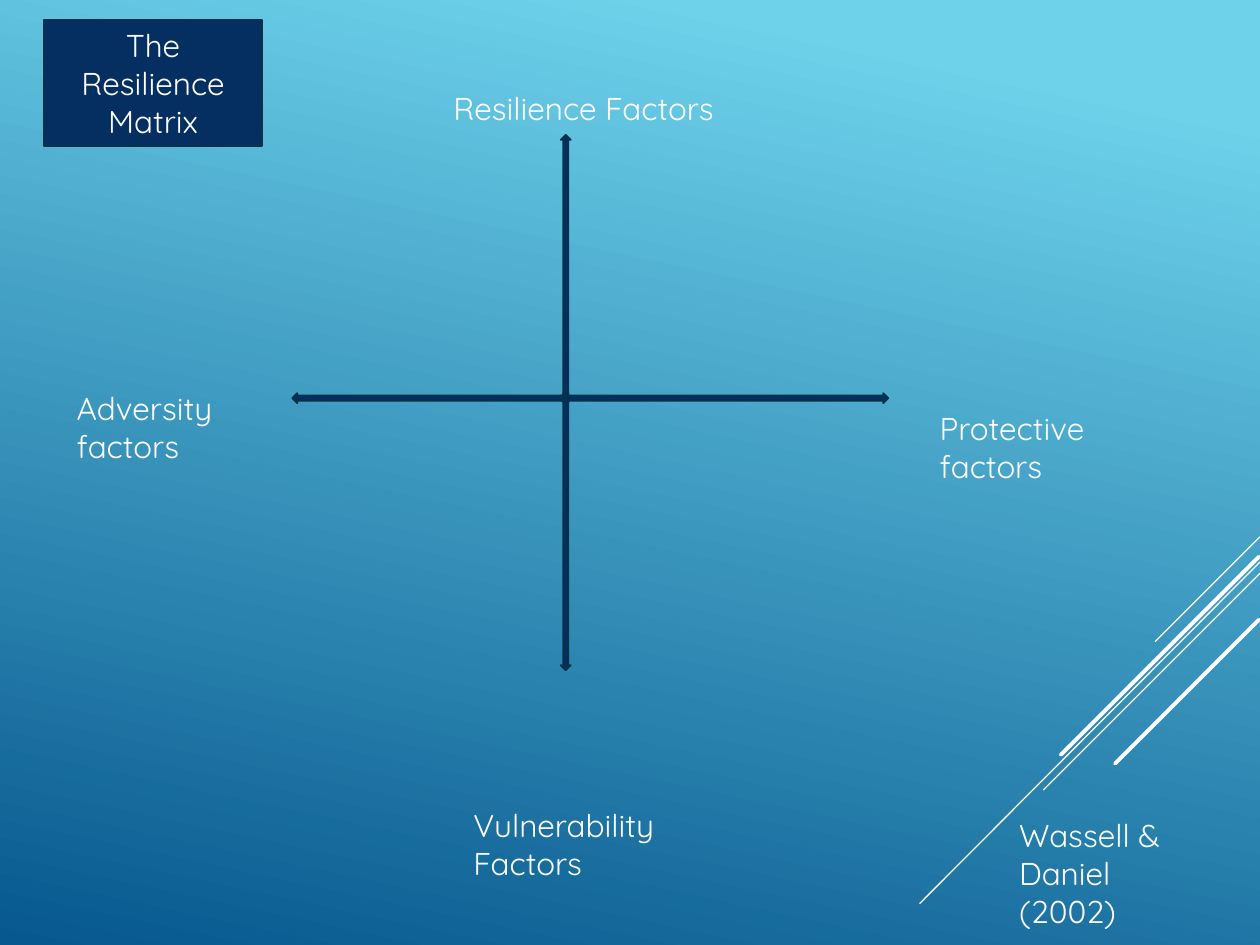
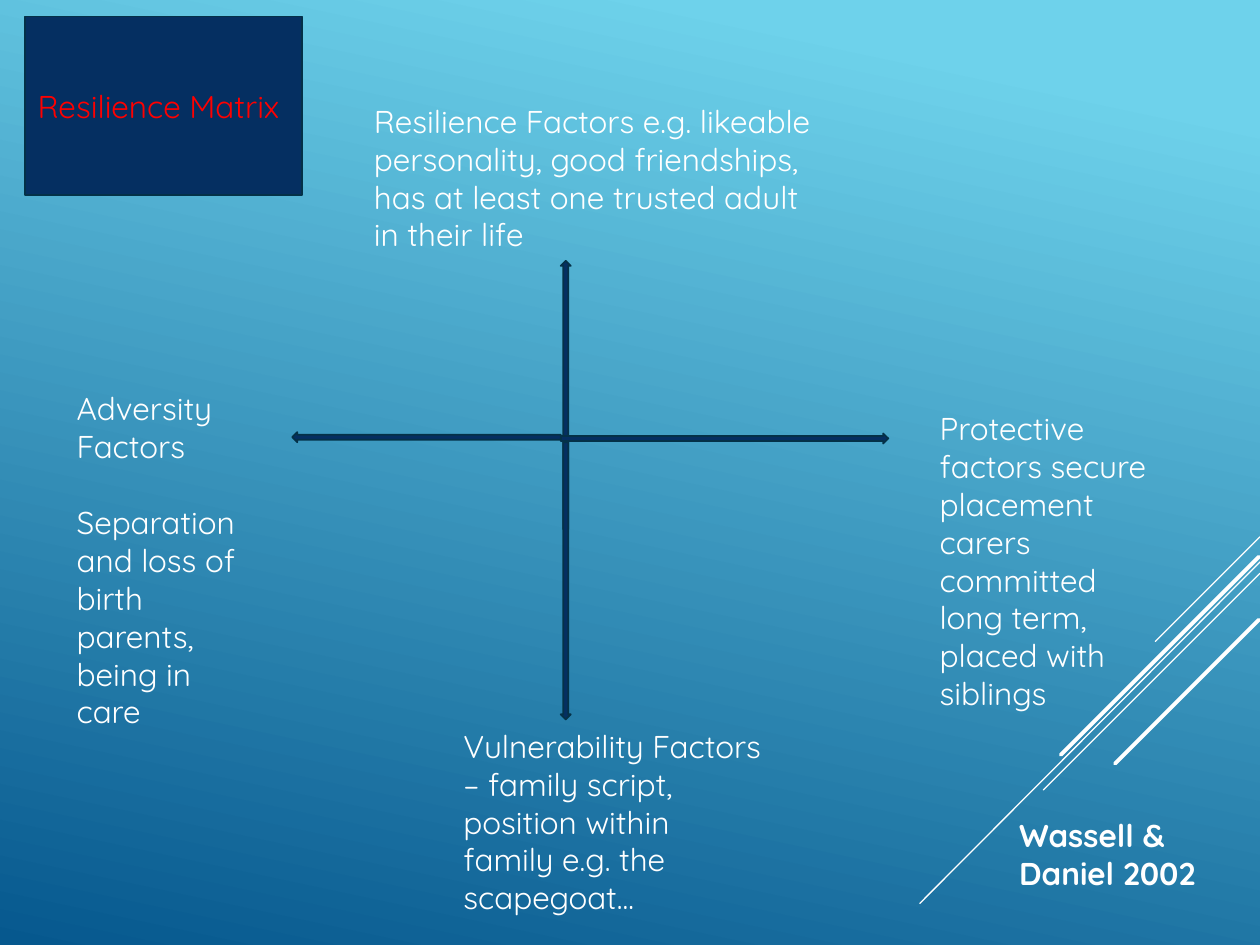
"""Build two slides showing the resilience matrix, plain and with examples."""
from lxml.etree import SubElement
from pptx import Presentation
from pptx.dml.color import RGBColor
from pptx.enum.shapes import MSO_CONNECTOR, MSO_SHAPE
from pptx.enum.text import MSO_ANCHOR, PP_ALIGN
from pptx.oxml.ns import qn
from pptx.util import Inches, Pt

SKY = RGBColor(0x6E, 0xD2, 0xEB)
DEEP = RGBColor(0x06, 0x58, 0x8E)
NAVY = RGBColor(0x05, 0x2F, 0x61)
EDGE = RGBColor(0x04, 0x31, 0x48)
WHITE = RGBColor(0xFF, 0xFF, 0xFF)
RED = RGBColor(0xFF, 0x00, 0x00)

BODY = {"name": "Quicksand", "size": Pt(18), "bold": False}
STRIPES = [
    (10, 4.26, 9.17, 5.09, 0.75),
    (10, 4.46, 7.3, 7.17, 0.75),
    (10, 4.55, 8.28, 6.27, 0.75),
    (9.99, 4.42, 8.42, 5.99, 2.25),
    (9.99, 4.92, 8.85, 6.06, 2.25),
]
ARROWS = [MSO_SHAPE.UP_ARROW, MSO_SHAPE.RIGHT_ARROW, MSO_SHAPE.LEFT_ARROW, MSO_SHAPE.DOWN_ARROW]

SLIDES = [
    {
        "arrows": [(4.45, 1.07, 0.08, 2.13), (4.45, 3.12, 2.6, 0.08),
                   (2.32, 3.12, 2.2, 0.08), (4.45, 3.12, 0.08, 2.2)],
        "labels": [
            ((0.51, 3.04, 1.42, 0.71), ["Adversity", "factors"]),
            ((7.36, 3.2, 1.89, 0.71), ["Protective factors"]),
            ((3.5, 0.66, 3.23, 0.4), ["Resilience Factors"]),
            ((3.66, 6.35, 1.97, 0.71), ["Vulnerability Factors"]),
        ],
        "title": ((0.35, 0.16, 1.73, 1), "The Resilience Matrix", WHITE, PP_ALIGN.CENTER),
        "credit": ((7.99, 6.43, 1.65, 1.01), "Wassell & Daniel (2002)", False),
    },
    {
        "arrows": [(4.45, 2.07, 0.08, 2.13), (4.45, 3.44, 2.6, 0.08),
                   (2.32, 3.43, 2.13, 0.08), (4.45, 3.51, 0.08, 2.2)],
        "labels": [
            ((0.51, 3.04, 1.57, 2.83),
             ["Adversity", "Factors", "Separation and loss of birth parents, being in care"]),
            ((7.36, 3.2, 1.89, 2.52),
             ["Protective factors secure placement carers committed long term, placed with siblings"]),
            ((2.87, 0.76, 3.7, 1.31),
             ["Resilience Factors e.g. likeable personality, good friendships, "
              "has at least one trusted adult in their life"]),
            ((3.58, 5.72, 2.6, 1.62),
             ["Vulnerability Factors – family script, position within family e.g. the scapegoat..."]),
        ],
        "title": ((0.2, 0.13, 2.2, 1.42), "Resilience Matrix", RED, PP_ALIGN.LEFT),
        "credit": ((7.99, 6.43, 1.65, 0.71), "Wassell & Daniel 2002", True),
    },
]


def add_navy(s, kind, box):
    sp = s.shapes.add_shape(kind, *map(Inches, box))
    sp.shadow.inherit = False
    sp.fill.solid()
    sp.fill.fore_color.rgb = NAVY
    sp.line.color.rgb = EDGE
    sp.line.width = Pt(1)
    return sp


def write(sp, lines, color=WHITE, align=PP_ALIGN.LEFT, **changes):
    tf = sp.text_frame
    tf.word_wrap = True
    for i, line in enumerate(lines):
        p = tf.paragraphs[0] if i == 0 else tf.add_paragraph()
        p.alignment = align
        if i == 2:
            p.space_before = Pt(22)
        r = p.add_run()
        r.text = line
        r.font.color.rgb = color
        for key, value in {**BODY, **changes}.items():
            setattr(r.font, key, value)


prs = Presentation()
prs.slide_width, prs.slide_height = Inches(10), Inches(7.5)

fill = prs.slide_master.background.fill
fill.gradient()
fill.gradient_angle = 360 - 102
for stop, color, position in zip(fill.gradient_stops, (SKY, DEEP), (0.1, 1)):
    stop.color.rgb = color
    stop.position = position

for content in SLIDES:
    s = prs.slides.add_slide(prs.slide_layouts[6])

    stripes = s.shapes.add_group_shape()
    for *ends, weight in STRIPES:
        line = stripes.shapes.add_connector(MSO_CONNECTOR.STRAIGHT, *map(Inches, ends))
        line.line.color.rgb = WHITE
        line.line.width = Pt(weight)
        line.element.spPr.find(qn("a:ln")).set("cap", "rnd")
        SubElement(line.element.spPr, qn("a:effectLst"))

    for kind, box in zip(ARROWS, content["arrows"]):
        add_navy(s, kind, box)

    for box, lines in content["labels"]:
        write(s.shapes.add_textbox(*map(Inches, box)), lines)

    box, text, color, align = content["title"]
    sp = add_navy(s, MSO_SHAPE.RECTANGLE, box)
    sp.text_frame.vertical_anchor = MSO_ANCHOR.MIDDLE
    write(sp, [text], color, align)

    box, text, bold = content["credit"]
    write(s.shapes.add_textbox(*map(Inches, box)), [text], bold=bold)

prs.save("out.pptx")
